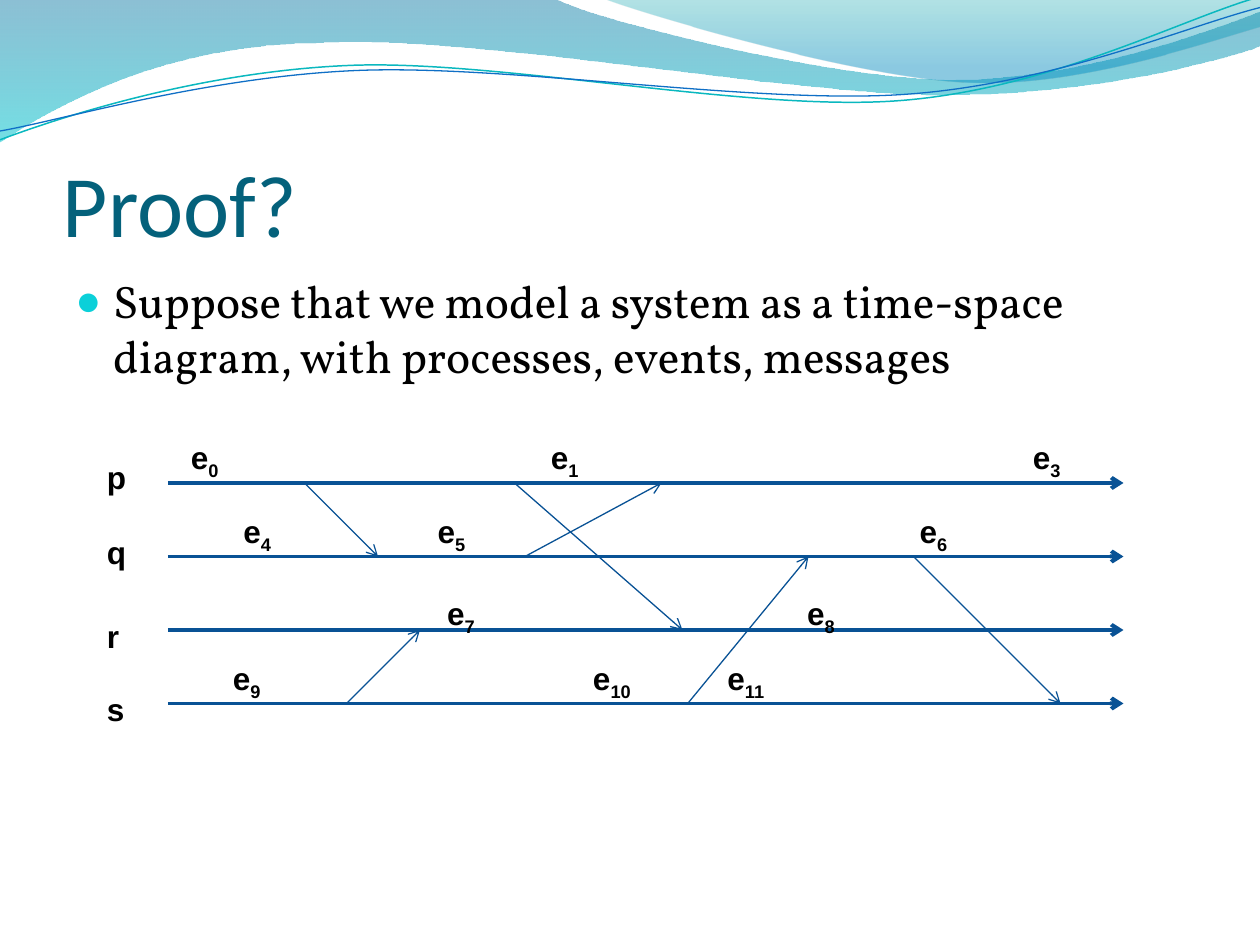
from dataclasses import dataclass

from lxml.etree import SubElement
from pptx import Presentation
from pptx.dml.color import RGBColor
from pptx.enum.shapes import MSO_CONNECTOR
from pptx.enum.text import MSO_ANCHOR, MSO_AUTO_SIZE
from pptx.oxml.ns import qn
from pptx.util import Emu, Inches, Pt

COLUMN = Inches(1) / 12
LANE_START, LANE_END = 16, 107
FIRST_LANE, LANE_GAP = 46, 7


@dataclass(frozen=True)
class Theme:
    title: str = "04617B"
    text: str = "000000"
    bullet: str = "0BD0D9"
    arrow: str = "095295"
    title_font: str = "Calibri"
    body_font: str = "Vollkorn"
    label_font: str = "Arial"
    title_size: float = 50
    body_size: float = 26
    label_size: float = 18
    lane_width: float = 2.25
    message_width: float = 0.75


@dataclass(frozen=True)
class GradientStop:
    position: float
    color: str
    opacity: int


@dataclass(frozen=True)
class Wave:
    start: tuple
    segments: tuple
    stops: tuple = ()
    line_color: str = ""
    line_width: float = 0


@dataclass(frozen=True)
class Lane:
    name: str
    name_row: float
    events_column: float
    events_row: float
    events: tuple
    tabs: tuple


@dataclass(frozen=True)
class Message:
    from_column: float
    from_lane: int
    to_column: float
    to_lane: int


THEME = Theme()
WAVES = (
    Wave((0, -0.01), (
        (4.4, -0.01), (4.76, 0.17, 6.64, 0.63, 7.58, 0.63),
        (8.53, 0.63, 9.58, 0.26, 10, 0.09), (10.01, 0.36),
        (9.83, 0.44, 8.7, 0.76, 7.46, 0.75), (6.22, 0.75, 3.82, 0.28, 2.57, 0.34),
        (1.29, 0.35, 0.46, 0.83, -0.01, 1.13),
    ), (GradientStop(0, "0074A1", 45), GradientStop(1, "00C6CF", 55))),
    Wave((4.79, -0.01), (
        (5.09, 0.11, 6.82, 0.62, 7.69, 0.65), (8.56, 0.69, 9.61, 0.32, 10, 0.21), (10, 0),
    ), (GradientStop(0, "00A1A9", 30), GradientStop(0.8, "008BBF", 45))),
    Wave((0, 1.11), (
        (0.48, 0.93, 1.58, 0.57, 2.77, 0.52), (3.95, 0.47, 5.93, 0.89, 7.13, 0.8),
        (8.33, 0.71, 9.38, 0.15, 9.98, -0.02),
    ), line_color="0AB8BF", line_width=0.85),
    Wave((0, 1.04), (
        (0.47, 0.96, 1.64, 0.61, 2.83, 0.56), (4.03, 0.51, 5.97, 0.83, 7.17, 0.75),
        (8.36, 0.67, 9.41, 0.21, 10, 0.06),
    ), line_color="0F6FC6", line_width=0.75),
)
LANES = (
    Lane("p", 43, 17, 41.1, ("0", "1", "3"), (0, 34.3, 80.2)),
    Lane("q", 50.2, 22, 48.2, ("4", "5", "6"), (0, 18.5, 64.4)),
    Lane("r", 58.2, 17, 56, ("7", "8"), (24.4, 58.7)),
    Lane("s", 65.1, 21, 62.2, ("9", "10", "11"), (0, 34.3, 47.1)),
)
MESSAGES = (
    Message(29, 0, 36, 1), Message(50, 1, 63, 0), Message(49, 0, 65, 2),
    Message(33, 3, 40, 2), Message(65.5, 3, 77, 1), Message(87, 1, 101, 3),
)


def grid(units: float) -> Emu:
    return Emu(round(units * COLUMN))


def lane_row(index: int) -> float:
    return FIRST_LANE + index * LANE_GAP


def bend_segments(shape, segments: tuple) -> None:
    edges = list(shape._element.iter(qn("a:lnTo")))
    for edge, segment in zip(edges, segments):
        if len(segment) == 2:
            continue
        edge.tag = qn("a:cubicBezTo")
        end_point = edge[0]
        for x, y in (segment[:2], segment[2:4]):
            control = SubElement(edge, qn("a:pt"))
            control.set("x", str(Inches(x) - shape.left))
            control.set("y", str(Inches(y) - shape.top))
        edge.append(end_point)


def draw_wave(slide, wave: Wave) -> None:
    anchors = [(Inches(x), Inches(y)) for x, y in
               (wave.start, *(segment[-2:] for segment in wave.segments))]
    builder = slide.shapes.build_freeform(*anchors[0])
    builder.add_line_segments(anchors[1:], close=bool(wave.stops))
    shape = builder.convert_to_shape()
    bend_segments(shape, wave.segments)
    shape.shadow.inherit = False
    if not wave.stops:
        shape.fill.background()
        shape.line.color.rgb = RGBColor.from_string(wave.line_color)
        shape.line.width = Pt(wave.line_width)
        return
    shape.line.fill.background()
    shape.fill.gradient()
    shape.fill.gradient_angle = 270
    for target, stop in zip(shape.fill.gradient_stops, wave.stops):
        target.position = stop.position
        target.color.rgb = RGBColor.from_string(stop.color)
    for color, stop in zip(shape._element.iter(qn("a:srgbClr")), wave.stops):
        SubElement(color, qn("a:alpha"), val=str(stop.opacity * 1000))


def format_run(run, font: str, size: float, color: str, bold: bool = False) -> None:
    run.font.name = font
    run.font.size = Pt(size)
    run.font.bold = bold
    run.font.color.rgb = RGBColor.from_string(color)


def add_text(slide, column: float, row: float, width: float, height: float, text: str = ""):
    text_frame = slide.shapes.add_textbox(*map(grid, (column, row, width, height))).text_frame
    text_frame.word_wrap = True
    text_frame.text = text
    return text_frame


def draw_title(slide) -> None:
    text_frame = add_text(slide, 6, 9.24, 108, 15, "Proof?")
    text_frame.vertical_anchor = MSO_ANCHOR.BOTTOM
    text_frame.margin_left = text_frame.margin_right = text_frame.margin_bottom = 0
    format_run(text_frame.paragraphs[0].runs[0], THEME.title_font, THEME.title_size, THEME.title)


def draw_body(slide) -> None:
    text_frame = add_text(
        slide, 6, 25.44, 108, 57.6,
        "Suppose that we model a system as a time-space diagram, with processes, events, messages")
    paragraph = text_frame.paragraphs[0]
    paragraph.space_before = Pt(THEME.body_size * 0.2)
    format_run(paragraph.runs[0], THEME.body_font, THEME.body_size, THEME.text)
    properties = paragraph._p.get_or_add_pPr()
    properties.set("marL", str(Inches(0.3)))
    properties.set("indent", str(Inches(-0.3)))
    SubElement(SubElement(properties, qn("a:buClr")), qn("a:srgbClr"), val=THEME.bullet)
    SubElement(properties, qn("a:buSzPct"), val="95000")
    SubElement(properties, qn("a:buFont"), typeface=THEME.label_font)
    SubElement(properties, qn("a:buChar"), char="●")


def draw_arrow(slide, start: tuple, end: tuple, width: float) -> None:
    connector = slide.shapes.add_connector(MSO_CONNECTOR.STRAIGHT, *map(grid, start + end))
    connector.line.color.rgb = RGBColor.from_string(THEME.arrow)
    connector.line.width = Pt(width)
    SubElement(connector.line._get_or_add_ln(), qn("a:tailEnd"), type="arrow")
    SubElement(connector._element.spPr, qn("a:effectLst"))


def draw_lane(slide, index: int, lane: Lane) -> None:
    row = lane_row(index)
    draw_arrow(slide, (LANE_START, row), (LANE_END, row), THEME.lane_width)
    name = add_text(slide, 9, lane.name_row, 4, 4.8, lane.name)
    events = add_text(slide, lane.events_column, lane.events_row, 89, 4.8)
    paragraph = events.paragraphs[0]
    tab_list = SubElement(paragraph._p.get_or_add_pPr(), qn("a:tabLst"))
    for event, tab in zip(lane.events, lane.tabs):
        if tab:
            SubElement(tab_list, qn("a:tab"), pos=str(grid(tab)), algn="l")
        paragraph.add_run().text = "\te" if tab else "e"
        subscript = paragraph.add_run()
        subscript.text = event
        subscript.font._element.set("baseline", "-25000")
    for text_frame in (name, events):
        text_frame.auto_size = MSO_AUTO_SIZE.SHAPE_TO_FIT_TEXT
        for run in text_frame.paragraphs[0].runs:
            format_run(run, THEME.label_font, THEME.label_size, THEME.text, bold=True)


def main() -> None:
    presentation = Presentation()
    presentation.slide_width, presentation.slide_height = Inches(10), Inches(7.5)
    slide = presentation.slides.add_slide(presentation.slide_layouts[6])
    for wave in WAVES:
        draw_wave(slide, wave)
    draw_title(slide)
    draw_body(slide)
    for index, lane in enumerate(LANES):
        draw_lane(slide, index, lane)
    for message in MESSAGES:
        draw_arrow(slide, (message.from_column, lane_row(message.from_lane)),
                   (message.to_column, lane_row(message.to_lane)), THEME.message_width)
    presentation.save("out.pptx")


if __name__ == "__main__":
    main()
